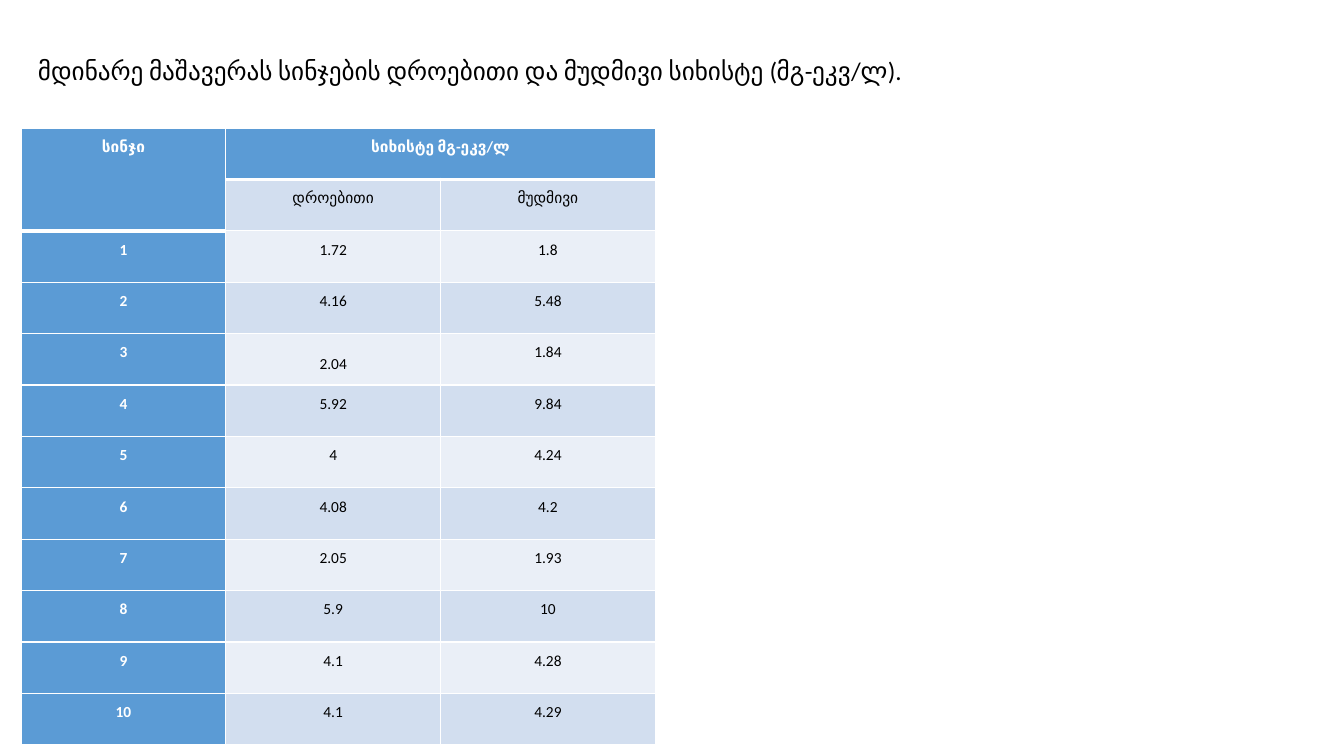
from dataclasses import dataclass

from lxml import etree
from pptx import Presentation
from pptx.dml.color import RGBColor
from pptx.enum.text import MSO_ANCHOR, PP_ALIGN
from pptx.oxml.ns import qn
from pptx.util import Inches, Pt

LEFT, CENTER = PP_ALIGN.LEFT, PP_ALIGN.CENTER
TOP, MIDDLE = MSO_ANCHOR.TOP, MSO_ANCHOR.MIDDLE
TITLE_ONLY = 5


@dataclass(frozen=True)
class Theme:
    font: str = "Calibri"
    title_size: int = 18
    cell_size: int = 11
    black: str = "000000"
    white: str = "FFFFFF"
    header: str = "5B9BD5"
    band_dark: str = "D2DEEF"
    band_light: str = "EAEFF7"
    thin: int = 1
    thick: int = 3


@dataclass(frozen=True)
class Sample:
    temporary: str
    permanent: str
    temporary_anchor: MSO_ANCHOR = TOP


THEME = Theme()
TITLE = " მდინარე მაშავერას სინჯების დროებითი და მუდმივი სიხისტე (მგ-ეკვ/ლ)."
SAMPLES = [
    Sample("1.72", "1.8"),
    Sample("4.16", "5.48"),
    Sample("2.04", "1.84", MIDDLE),
    Sample("5.92", "9.84"),
    Sample("4", "4.24"),
    Sample("4.08", "4.2"),
    Sample("2.05", "1.93"),
    Sample("5.9", "10"),
    Sample("4.1", "4.28"),
    Sample("4.1", "4.29"),
]
COL_WIDTHS = (2.03, 2.13, 2.13)
HEADER_DEPTHS = (2, 1, 1)  # header rows in each column
ROW_HEIGHT = 0.51


def style_text(tf, size: int, color: str, bold: bool, align: PP_ALIGN, spacing: float) -> None:
    for p in tf.paragraphs:
        p.alignment = align
        p.line_spacing = spacing
        for r in p.runs:
            r.font.name = THEME.font
            r.font.size = Pt(size)
            r.font.bold = bold
            r.font.color.rgb = RGBColor.from_string(color)


def set_borders(cell, top: int, bottom: int) -> None:
    tc_pr = cell._tc.get_or_add_tcPr()
    widths = {"L": THEME.thin, "R": THEME.thin, "T": top, "B": bottom}
    for side, width in widths.items():
        ln = etree.SubElement(tc_pr, qn(f"a:ln{side}"), w=str(Pt(width)))
        fill = etree.SubElement(ln, qn("a:solidFill"))
        etree.SubElement(fill, qn("a:srgbClr"), val=THEME.white)


def style_cell(cell, row: int, col: int) -> None:
    depth = HEADER_DEPTHS[col]
    is_header = col == 0 or row < depth
    band = THEME.band_dark if row % 2 else THEME.band_light
    set_borders(
        cell,
        top=THEME.thick if row == depth else THEME.thin,
        bottom=THEME.thick if row < depth else THEME.thin,
    )
    cell.fill.solid()
    cell.fill.fore_color.rgb = RGBColor.from_string(THEME.header if is_header else band)
    cell.margin_left = cell.margin_right = Inches(0.07)
    cell.margin_top = cell.margin_bottom = 0
    color = THEME.white if is_header else THEME.black
    style_text(cell.text_frame, THEME.cell_size, color, is_header, CENTER, 1.5)


def add_title(slide) -> None:
    sp = slide.shapes.title
    sp.left, sp.top = Inches(0.22), Inches(0.29)
    sp.width, sp.height = Inches(10.87), Inches(0.85)
    tf = sp.text_frame
    tf.text = TITLE
    tf.vertical_anchor = MIDDLE
    style_text(tf, THEME.title_size, THEME.black, False, LEFT, 0.9)


def add_hardness_table(slide) -> None:
    rows = [("სინჯი", "სიხისტე მგ-ეკვ/ლ", ""), ("", "დროებითი", "მუდმივი")]
    rows += [(str(n), s.temporary, s.permanent) for n, s in enumerate(SAMPLES, 1)]
    table = slide.shapes.add_table(
        len(rows), len(COL_WIDTHS), Inches(0.21), Inches(1.27),
        Inches(sum(COL_WIDTHS)), Inches(ROW_HEIGHT * len(rows)),
    ).table
    for column, width in zip(table.columns, COL_WIDTHS):
        column.width = Inches(width)
    for i, texts in enumerate(rows):
        table.rows[i].height = Inches(ROW_HEIGHT)
        for j, text in enumerate(texts):
            cell = table.cell(i, j)
            cell.text = text
            style_cell(cell, i, j)

    # Anchors of the measured values
    for i, sample in enumerate(SAMPLES, 2):
        table.cell(i, 1).vertical_anchor = sample.temporary_anchor

    # Merged headings
    table.cell(0, 0).merge(table.cell(1, 0))
    table.cell(0, 1).merge(table.cell(0, 2))


def main() -> None:
    prs = Presentation()
    prs.slide_width, prs.slide_height = Inches(13.33), Inches(7.5)
    slide = prs.slides.add_slide(prs.slide_layouts[TITLE_ONLY])
    add_title(slide)
    add_hardness_table(slide)
    prs.save("out.pptx")


if __name__ == "__main__":
    main()
